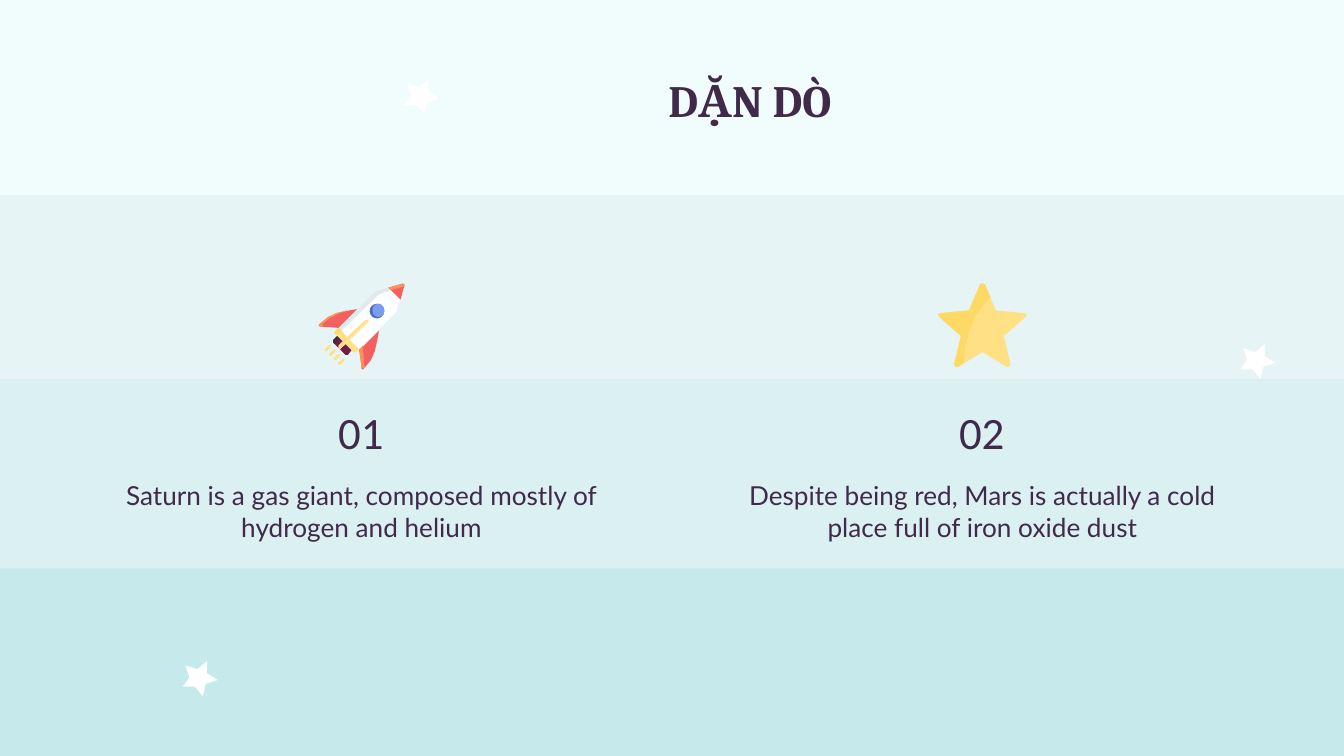
import pptx
import pptx.dml.color
import pptx.enum.shapes
import pptx.enum.text
import pptx.util

Inches = pptx.util.Inches
SHAPE = pptx.enum.shapes.MSO_SHAPE
ANCHOR = pptx.enum.text.MSO_ANCHOR
COLORS = {
    "background": "E7F4F5", "sky": "F1FCFC", "middle": "DBF0F1", "ground": "C6EAEB",
    "ink": "41294A", "white": "FFFFFF", "gray": "E2E9ED", "red": "F46060",
    "orange": "FB9258", "yellow": "FFE084", "gold": "FFD966", "cream": "FFE8A6",
    "blue": "799CF2", "navy": "4A6BBD", "plum": "741B47",
}

deck = pptx.Presentation()
deck.slide_width, deck.slide_height = Inches(10), Inches(10 * 9 / 16)
page = deck.slides.add_slide(deck.slide_layouts[6])
page.background.fill.solid()
page.background.fill.fore_color.rgb = pptx.dml.color.RGBColor.from_string(COLORS["background"])


def draw(color, points=None, preset=None, at=None):
    """Add a filled shape without outline: a polygon of points, or a preset in the box at."""
    if points:
        corners = [(Inches(x), Inches(y)) for x, y in points]
        builder = page.shapes.build_freeform(*corners[0])
        builder.add_line_segments(corners[1:], close=True)
        shape = builder.convert_to_shape()
    else:
        shape = page.shapes.add_shape(preset, *map(Inches, at))
    shape.shadow.inherit = False
    shape.fill.solid()
    shape.fill.fore_color.rgb = pptx.dml.color.RGBColor.from_string(COLORS[color])
    shape.line.fill.background()
    return shape


def write(text, at, font, size, anchor=ANCHOR.TOP, bold=False):
    """Add a centred text box."""
    box = page.shapes.add_textbox(*map(Inches, at))
    frame = box.text_frame
    frame.word_wrap = True
    frame.vertical_anchor = anchor
    frame.margin_left = frame.margin_right = Inches(0.1)
    frame.margin_top = frame.margin_bottom = Inches(0.1)
    para = frame.paragraphs[0]
    para.text = text
    para.alignment = pptx.enum.text.PP_ALIGN.CENTER
    para.font.name, para.font.size, para.font.bold = font, pptx.util.Pt(size), bold
    para.font.color.rgb = pptx.dml.color.RGBColor.from_string(COLORS["ink"])


# Background bands
for color, top, height in [("middle", 2.82, 1.44), ("ground", 4.23, 1.44), ("sky", -0.03, 1.48)]:
    draw(color, preset=SHAPE.RECTANGLE, at=(-0.01, top, 10.07, height))

# Small white stars
small_star = [(0.18, 0), (0.18, 0.09), (0.26, 0.14), (0.17, 0.17), (0.15, 0.26),
              (0.09, 0.19), (0, 0.19), (0.05, 0.12), (0.02, 0.03), (0.11, 0.06)]
for left, top in [(9.23, 2.56), (3.01, 0.59), (1.36, 4.92)]:
    draw("white", [(left + x, top + y) for x, y in small_star])

# Title and the two numbered columns
write("DẶN DÒ", (1.38, 0.44, 8.4, 0.45), "Cambria", 24, bold=True)
columns = [
    ("01", 1.47, "Saturn is a gas giant, composed mostly of hydrogen and helium", 0.83),
    ("02", 6.09, "Despite being red, Mars is actually a cold place full of iron oxide dust", 5.45),
]
for number, number_left, note, note_left in columns:
    write(number, (number_left, 2.82, 2.43, 0.78), "Calibri", 24, ANCHOR.MIDDLE)
    write(note, (note_left, 3.47, 3.72, 1.13), "Lato", 14)

# Yellow star: the shaded left part shares its outline with the whole
star_left = [(7.33, 2.12), (7.32, 2.11), (7.3, 2.11), (7.29, 2.12), (7.21, 2.31), (7, 2.33),
             (6.98, 2.34), (6.99, 2.36), (7.15, 2.5), (7.1, 2.71), (7.11, 2.73), (7.13, 2.73)]
star_right = [(7.31, 2.62), (7.49, 2.73), (7.51, 2.73), (7.52, 2.71), (7.47, 2.5),
              (7.63, 2.36), (7.64, 2.34), (7.62, 2.33), (7.41, 2.31)]
star_shade_edge = [(7.17, 2.7), (7.18, 2.59), (7.21, 2.47), (7.26, 2.35), (7.31, 2.28), (7.37, 2.21)]
draw("yellow", star_left + star_right)
draw("gold", star_left + star_shade_edge)

# Rocket fins: the lower one mirrors the upper one across the rocket's diagonal axis
fin = [(2.66, 2.3), (2.6, 2.31), (2.51, 2.33), (2.44, 2.36), (2.38, 2.41),
       (2.37, 2.42), (2.38, 2.43), (2.52, 2.44)]
fin_edge = [(2.58, 2.31), (2.5, 2.33), (2.44, 2.36), (2.38, 2.41), (2.37, 2.42),
            (2.38, 2.43), (2.4, 2.43), (2.4, 2.41), (2.45, 2.37), (2.51, 2.34)]
lower_edge = [(2.7, 2.57), (2.67, 2.6), (2.69, 2.73), (2.7, 2.74), (2.72, 2.73), (2.71, 2.72)]
axis_sum = 5.12
draw("red", fin)
draw("red", [(axis_sum - y, axis_sum - x) for x, y in fin])
draw("orange", fin_edge)
draw("orange", lower_edge)

# Rocket body and porthole
draw("white", [(3, 2.11), (2.81, 2.16), (2.79, 2.17), (2.49, 2.47), (2.49, 2.48), (2.63, 2.62),
               (2.65, 2.62), (2.94, 2.33), (2.95, 2.31), (3.01, 2.12)])
draw("gray", [(3, 2.11), (2.81, 2.16), (2.79, 2.17), (2.49, 2.47), (2.49, 2.48), (2.51, 2.49),
              (2.81, 2.2), (2.82, 2.19), (3.01, 2.13), (3.01, 2.12)])
draw("navy", preset=SHAPE.OVAL, at=(2.75, 2.26, 0.11, 0.11))
draw("blue", preset=SHAPE.OVAL, at=(2.77, 2.26, 0.09, 0.1))

# Engine, collar, nose and centre stripe
rocket_parts = [
    ("plum", [(2.51, 2.5), (2.48, 2.53), (2.48, 2.55), (2.57, 2.64), (2.59, 2.64), (2.62, 2.6)]),
    ("ink", [(2.51, 2.5), (2.48, 2.53), (2.48, 2.55), (2.49, 2.56), (2.53, 2.52)]),
    ("yellow", [(2.52, 2.44), (2.49, 2.47), (2.49, 2.48), (2.63, 2.62), (2.65, 2.62), (2.67, 2.6)]),
    ("gold", [(2.52, 2.44), (2.49, 2.47), (2.49, 2.48), (2.51, 2.49), (2.54, 2.46)]),
    ("red", [(3, 2.11), (2.89, 2.14), (2.98, 2.23), (3.01, 2.12)]),
    ("orange", [(3, 2.11), (2.89, 2.14), (2.91, 2.16), (3.01, 2.13), (3.01, 2.12)]),
    ("cream", [(2.73, 2.38), (2.72, 2.38), (2.52, 2.57), (2.52, 2.59), (2.53, 2.6),
               (2.54, 2.59), (2.74, 2.4), (2.74, 2.38)]),
    ("yellow", [(2.73, 2.38), (2.72, 2.38), (2.52, 2.57), (2.52, 2.59), (2.53, 2.6),
                (2.54, 2.58), (2.73, 2.39), (2.74, 2.38)]),
]
for color, points in rocket_parts:
    draw(color, points)

# Exhaust streaks
for index in range(4):
    shift = index * 0.1 / 3
    streak = draw("yellow", preset=SHAPE.ROUNDED_RECTANGLE, at=(2.41 + shift, 2.58 + shift, 0.06, 0.02))
    streak.adjustments[0] = 0.5
    streak.rotation = -45

deck.save("out.pptx")
